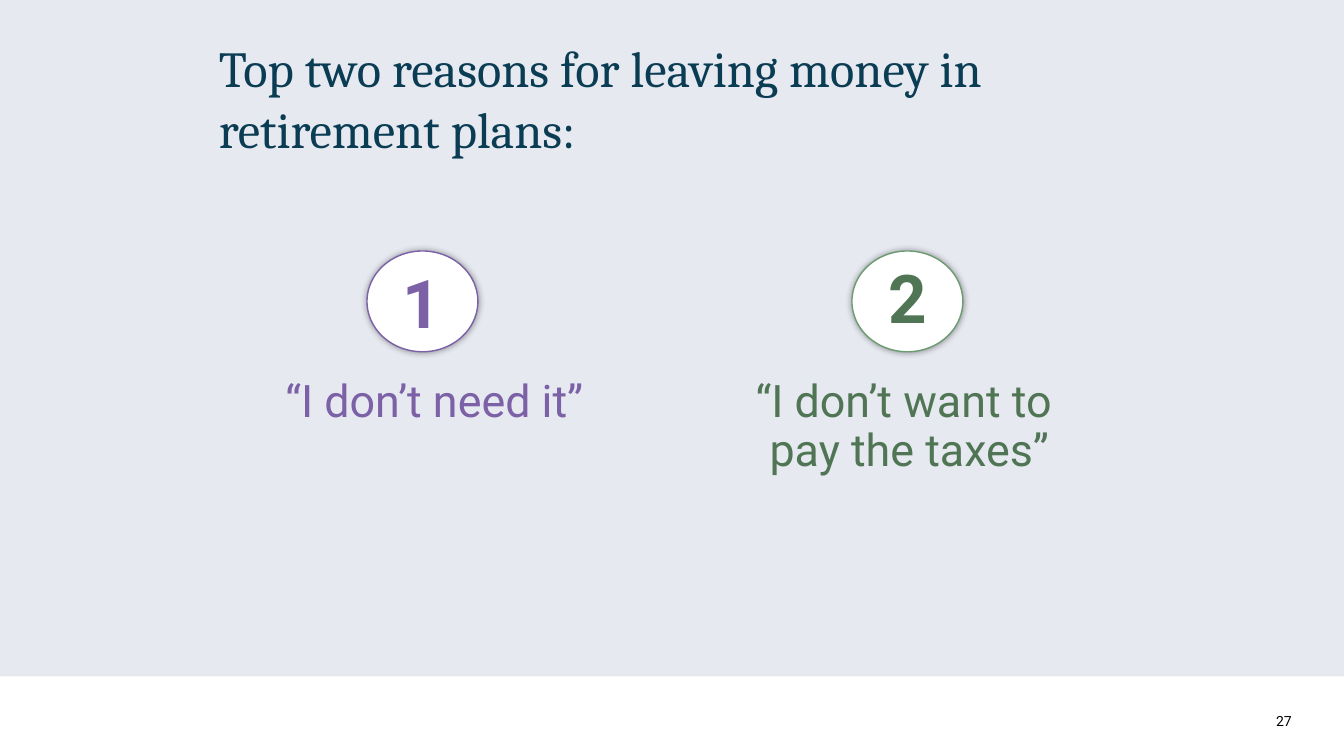
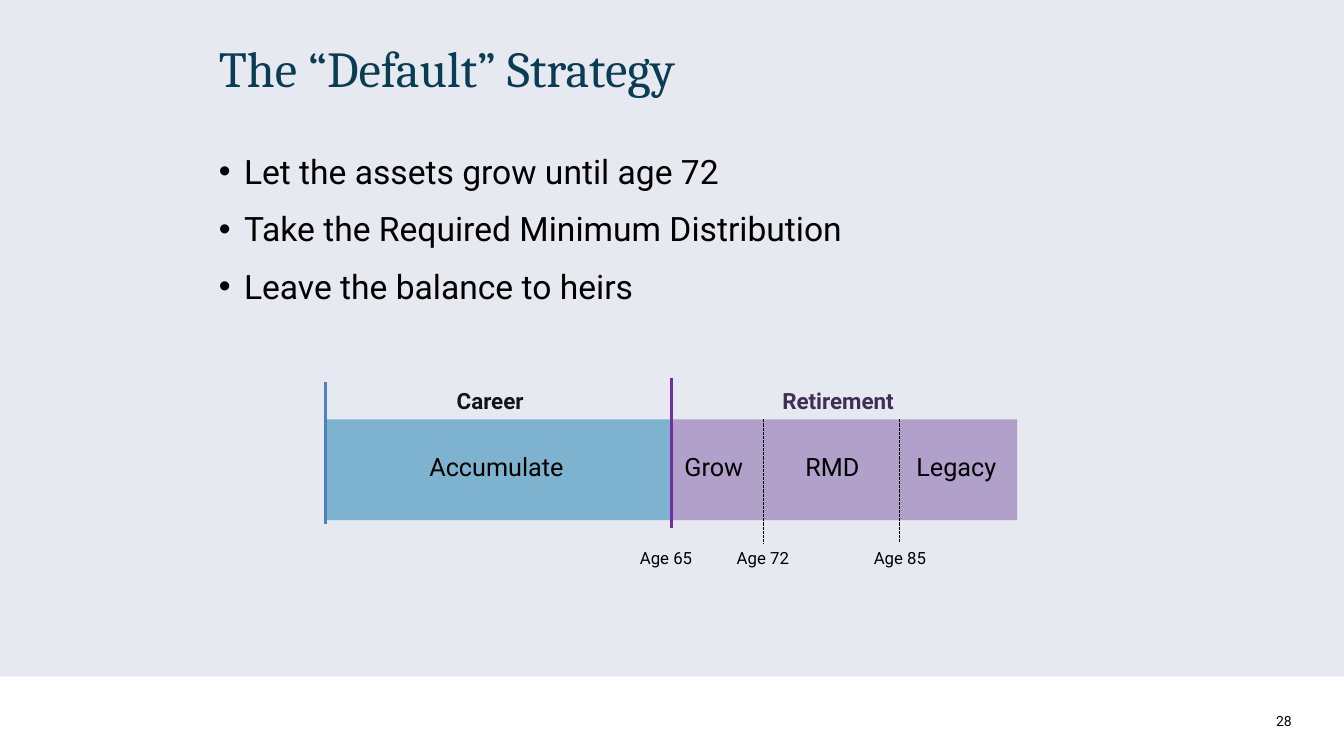
from lxml.etree import SubElement
from pptx import Presentation
from pptx.dml.color import RGBColor
from pptx.enum.dml import MSO_LINE
from pptx.enum.shapes import MSO_CONNECTOR, MSO_SHAPE
from pptx.enum.text import MSO_ANCHOR, MSO_AUTO_SIZE, PP_ALIGN
from pptx.oxml.ns import qn
from pptx.util import Inches, Pt

BACKGROUND, WHITE, BLACK, NAVY = "E6E9F0", "FFFFFF", "000000", "0A3C53"
PURPLE, GREEN, GREEN_LINE = "7C61A7", "507554", "6C9B71"
HEADING_FONT, BODY_FONT = "Cambria", "Roboto"
TITLE_ONLY, TITLE_AND_CONTENT = 5, 1
NO_INSETS = (0, 0, 0, 0)
TEXT_INSETS = (0.1, 0.05, 0.1, 0.05)


def color(hex_value):
    return RGBColor.from_string(hex_value)


def apply(target, values):
    for name, value in values.items():
        setattr(target, name, value)


def place(shape, box):
    apply(shape, dict(zip(("left", "top", "width", "height"), map(Inches, box))))


def format_frame(frame, insets, anchor=MSO_ANCHOR.TOP):
    margins = ("margin_left", "margin_top", "margin_right", "margin_bottom")
    apply(frame, dict(zip(margins, map(Inches, insets))))
    apply(frame, {"word_wrap": True, "auto_size": MSO_AUTO_SIZE.NONE,
                  "vertical_anchor": anchor})


def write(frame, lines, size, hex_value, font=BODY_FONT, bold=False, **paragraph_format):
    frame.text = "\n".join(lines)
    for paragraph in frame.paragraphs:
        apply(paragraph, paragraph_format)
        apply(paragraph.font, {"name": font, "size": Pt(size), "bold": bold})
        paragraph.font.color.rgb = color(hex_value)


def add_text(slide, box, lines, size, hex_value=BLACK, insets=TEXT_INSETS,
             anchor=MSO_ANCHOR.TOP, **formats):
    frame = slide.shapes.add_textbox(*map(Inches, box)).text_frame
    format_frame(frame, insets, anchor)
    write(frame, lines, size, hex_value, **formats)


def add_filled(slide, preset, box, fill, alpha=None):
    shape = slide.shapes.add_shape(preset, *map(Inches, box))
    shape.shadow.inherit = False
    shape.fill.solid()
    shape.fill.fore_color.rgb = color(fill)
    shape.line.fill.background()
    if alpha is not None:
        fill_color = shape._element.spPr.find(qn("a:solidFill"))[0]
        SubElement(fill_color, qn("a:alpha"), val=str(alpha * 1000))
    return shape


def add_vertical_line(slide, x, top, bottom, hex_value, width, dash=None):
    connector = slide.shapes.add_connector(
        MSO_CONNECTOR.STRAIGHT, *map(Inches, (x, top, x, bottom)))
    apply(connector.line, {"width": Pt(width), "dash_style": dash})
    connector.line.color.rgb = color(hex_value)
    SubElement(connector._element.spPr, qn("a:effectLst"))


def add_glow(shape):
    effects = shape._element.spPr.find(qn("a:effectLst"))
    shadow = SubElement(effects, qn("a:outerShdw"), blurRad=str(Pt(5)),
                        dist="0", dir="0", rotWithShape="0")
    shadow_color = SubElement(shadow, qn("a:srgbClr"), val=BLACK)
    SubElement(shadow_color, qn("a:alpha"), val="40000")


def style_master(presentation, slide):
    """Give the master its background and the white footer band."""
    master = presentation.slide_master
    master.background.fill.solid()
    master.background.fill.fore_color.rgb = color(BACKGROUND)
    band = add_filled(slide, MSO_SHAPE.RECTANGLE, (0, 6.71, 13.33, 0.79), WHITE)
    master.shapes._spTree.insert(2, band._element)


def add_slide(presentation, layout, title, title_height, number):
    slide = presentation.slides.add_slide(presentation.slide_layouts[layout])
    place(slide.shapes.title, (2.17, 0.37, 9.35, title_height))
    frame = slide.shapes.title.text_frame
    format_frame(frame, NO_INSETS)
    write(frame, [title], 36, NAVY, HEADING_FONT, alignment=PP_ALIGN.LEFT)
    add_text(slide, (12.57, 7.07, 0.33, 0.17), [str(number)], 10, insets=NO_INSETS,
             anchor=MSO_ANCHOR.MIDDLE, alignment=PP_ALIGN.CENTER)
    return slide


def add_reason(slide, box, number, lines, hex_value, outline, circle_left, number_box):
    """Draw a numbered circle above a quotation; offsets are from the box."""
    left, top, width, height = box
    circle = add_filled(slide, MSO_SHAPE.OVAL, (left + circle_left, top, 1.1, 1), WHITE)
    circle.line.color.rgb = color(outline)
    circle.line.width = Pt(1)
    add_glow(circle)
    number_left, number_top = number_box
    add_text(slide, (left + number_left, top + number_top, 2.73, 0.91), [number], 48,
             hex_value, bold=True, alignment=PP_ALIGN.CENTER)
    add_text(slide, (left, top + 1.14, width, height - 1.14), lines, 32, hex_value,
             insets=(0.13,) * 4, alignment=PP_ALIGN.CENTER, line_spacing=0.9)


def add_bullets(slide, box, lines):
    body = slide.placeholders[1]
    place(body, box)
    frame = body.text_frame
    format_frame(frame, NO_INSETS)
    frame.text = "\n".join(lines)
    for paragraph in frame.paragraphs:
        properties = paragraph._p.get_or_add_pPr()
        properties.set("marL", str(Inches(0.25)))
        properties.set("indent", str(Inches(-0.25)))
        SubElement(properties, qn("a:buChar"), char="•")
        paragraph.space_before = Pt(12)
        apply(paragraph.font, {"name": BODY_FONT, "size": Pt(24)})
        paragraph.font.color.rgb = color(BLACK)
    frame.paragraphs[0].space_before = Pt(0)


def add_timeline(slide, box):
    """Draw the career and retirement bar; offsets are from the bar."""
    left, top, width, height = box
    half = width / 2
    add_filled(slide, MSO_SHAPE.RECTANGLE, (left, top, half, height), "157FB0", 50)
    add_filled(slide, MSO_SHAPE.RECTANGLE, (left + half, top, half, height), "B0A0CA")

    for x, overhang, hex_value in ((0, 0.04, "4F81BD"), (half, 0.08, "7030A0")):
        add_vertical_line(slide, left + x, top - 0.33 - overhang,
                          top + height + overhang, hex_value, 2)
    for x, drop in ((4.34, 0.24), (5.69, 0.22)):
        add_vertical_line(slide, left + x, top, top + height + drop, BLACK, 0.75,
                          MSO_LINE.SQUARE_DOT)

    for x, name, hex_value in ((1.3, "Career", "12151D"), (4.53, "Retirement", "3E2F55")):
        add_text(slide, (left + x, top - 0.37, 1.58, 0.33), [name], 16, hex_value,
                 insets=(0, 0.05, 0, 0.05), bold=True)
    for x, name, label_width in ((0.93, "Accumulate", 1.58), (3.46, "Grow", 0.86),
                                 (4.66, "RMD", 0.81), (5.76, "Legacy", 1.11)):
        add_text(slide, (left + x, top + 0.27, label_width, 0.4), [name], 18)
    for center, age in ((3.43, 65), (4.39, 72), (5.75, 85)):
        add_text(slide, (left + center - 0.38, top + 1.22, 0.75, 0.33), [f"Age {age}"], 12,
                 insets=(0, 0.05, 0.1, 0.05), alignment=PP_ALIGN.CENTER)


def build_reasons(presentation):
    slide = add_slide(presentation, TITLE_ONLY,
                      "Top two reasons for leaving money in retirement plans:", 1.33, 27)
    add_reason(slide, (2.16, 2.49, 4.3, 3.3), "1", ["“I don’t need it”"],
               PURPLE, PURPLE, 1.48, (0.66, 0.05))
    add_reason(slide, (6.87, 2.49, 4.3, 3.3), "2", ["“I don’t want to ", "pay the taxes”"],
               GREEN, GREEN_LINE, 1.58, (0.77, 0))
    return slide


def build_strategy(presentation):
    slide = add_slide(presentation, TITLE_AND_CONTENT, "The “Default” Strategy", 0.45, 28)
    add_bullets(slide, (2.17, 1.5, 9.34, 1.68), [
        "Let the assets grow until age 72",
        "Take the Required Minimum Distribution",
        "Leave the balance to heirs",
    ])
    add_timeline(slide, (3.23, 4.16, 6.86, 1))


def main():
    presentation = Presentation()
    apply(presentation, {"slide_width": Inches(13.33), "slide_height": Inches(7.5)})
    style_master(presentation, build_reasons(presentation))
    build_strategy(presentation)
    presentation.save("out.pptx")


if __name__ == "__main__":
    main()
